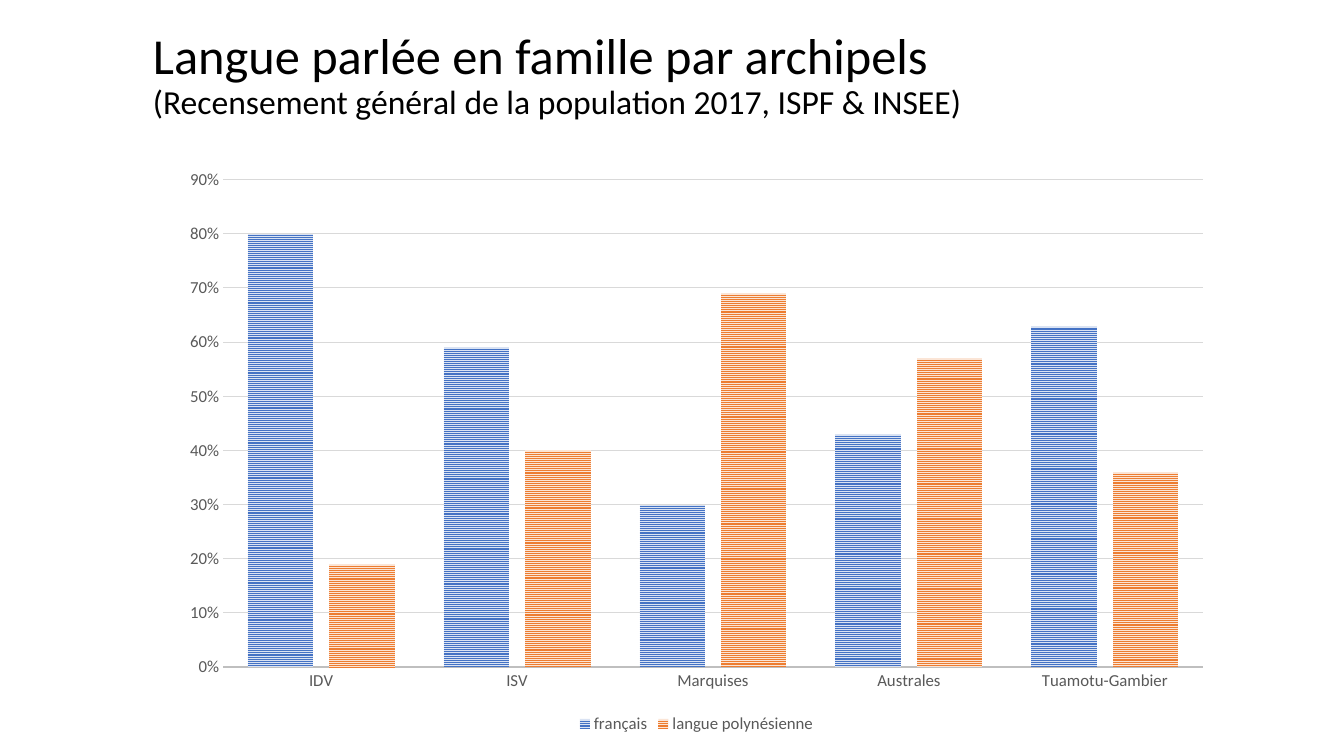
from pptx import Presentation
from pptx import util as u
from pptx.chart.data import CategoryChartData
from pptx.dml.color import RGBColor
from pptx.enum import chart as ch, dml, text

SCALE = 914400 / 100.8  # EMU per px
FONT = "Calibri"
GREY = "595959"

CATEGORIES = ["IDV", "ISV", "Marquises", "Australes", "Tuamotu-Gambier"]
# name, values, stripe colour, background colour
SERIES = [
    ("français", [0.8, 0.59, 0.3, 0.43, 0.63], "4472C4", "DAE3F3"),
    ("langue polynésienne", [0.19, 0.4, 0.69, 0.57, 0.36], "ED7D31", "FBE5D6"),
]


def px(n):
    return u.Emu(round(n * SCALE))


def rgb(value):
    return RGBColor.from_string(value)


def set_font(font, size, color):
    font.name = FONT
    font.size = u.Pt(size)
    font.color.rgb = rgb(color)


def set_line(line, width, color):
    line.width = u.Pt(width)
    line.color.rgb = rgb(color)


def add_title(s, box, heading, source):
    tf = s.shapes.add_textbox(*map(px, box)).text_frame
    tf.word_wrap = True
    tf.vertical_anchor = text.MSO_ANCHOR.MIDDLE
    p = tf.paragraphs[0]
    p.line_spacing = 0.9
    r = p.add_run()
    r.text = heading
    set_font(r.font, 36, "000000")
    p.add_line_break()
    r = p.add_run()
    r.text = source
    set_font(r.font, 24, "000000")


def add_language_chart(s, box):
    data = CategoryChartData(number_format="0%")
    data.categories = CATEGORIES
    for name, values, _, _ in SERIES:
        data.add_series(name, values)
    chart = s.shapes.add_chart(
        ch.XL_CHART_TYPE.COLUMN_CLUSTERED, *map(px, box), data).chart
    set_font(chart.font, 12, GREY)
    chart.has_title = False

    # Striped columns
    plot = chart.plots[0]
    plot.gap_width = 75
    plot.overlap = -25
    plot.vary_by_categories = False
    for series, (_, _, stripe, ground) in zip(plot.series, SERIES):
        fill = series.format.fill
        fill.patterned()
        fill.pattern = dml.MSO_PATTERN.NARROW_HORIZONTAL
        fill.fore_color.rgb = rgb(stripe)
        fill.back_color.rgb = rgb(ground)
        series.invert_if_negative = False

    # Axes
    for axis in (chart.category_axis, chart.value_axis):
        axis.major_tick_mark = axis.minor_tick_mark = ch.XL_TICK_MARK.NONE
        set_font(axis.tick_labels.font, 12, GREY)
    set_line(chart.category_axis.format.line, 1.5, "BFBFBF")
    values_axis = chart.value_axis
    values_axis.minimum_scale = 0
    values_axis.maximum_scale = 0.9
    values_axis.major_unit = 0.1
    values_axis.tick_labels.number_format = "0%"
    values_axis.tick_labels.number_format_is_linked = False
    values_axis.format.line.fill.background()
    set_line(values_axis.major_gridlines.format.line, 0.75, "D9D9D9")

    # Legend
    chart.has_legend = True
    chart.legend.position = ch.XL_LEGEND_POSITION.BOTTOM
    chart.legend.include_in_layout = False
    set_font(chart.legend.font, 12, GREY)


def main():
    prs = Presentation()
    prs.slide_width, prs.slide_height = px(1344), px(756)
    s = prs.slides.add_slide(prs.slide_layouts[6])
    add_title(s, (143, 13, 1081, 126),
              "Langue parlée en famille par archipels",
              "(Recensement général de la population 2017, ISPF & INSEE)")
    add_language_chart(s, (169, 158, 1055, 580))
    prs.save("out.pptx")


if __name__ == "__main__":
    main()
